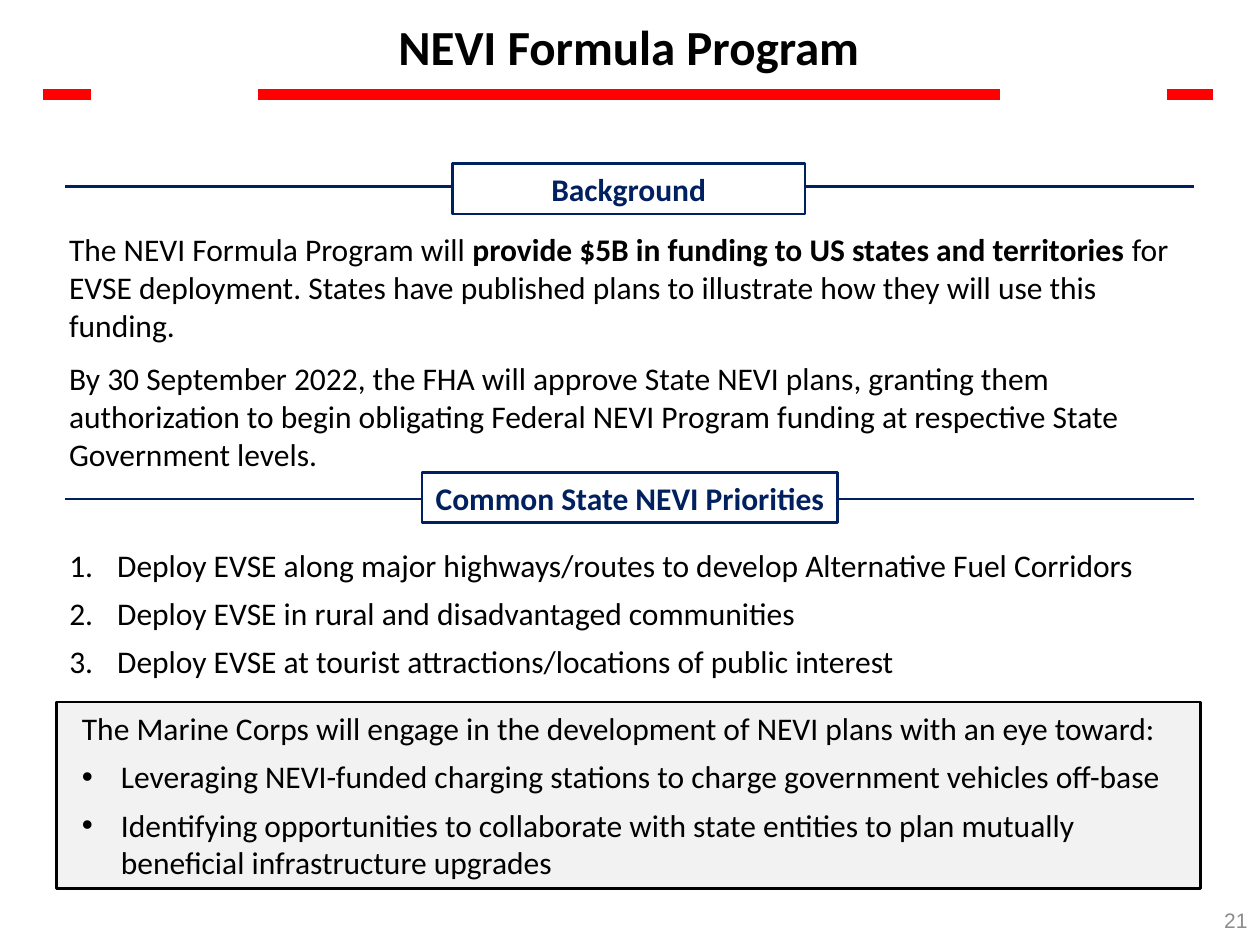
from dataclasses import dataclass

from lxml.etree import SubElement
from pptx import Presentation
from pptx.dml.color import RGBColor
from pptx.enum.shapes import MSO_CONNECTOR, MSO_SHAPE
from pptx.enum.text import MSO_ANCHOR, MSO_AUTO_SIZE, PP_ALIGN
from pptx.oxml.ns import qn
from pptx.util import Inches, Pt


@dataclass(frozen=True)
class Theme:
    font: str = "Calibri"
    number_font: str = "Arial"
    title_size: int = 28
    body_size: int = 18
    number_size: int = 12
    rule_width: float = 6
    outline_width: float = 1.5
    paragraph_gap: int = 6
    black: RGBColor = RGBColor(0, 0, 0)
    white: RGBColor = RGBColor(255, 255, 255)
    red: RGBColor = RGBColor(255, 0, 0)
    navy: RGBColor = RGBColor(0, 0x20, 0x60)
    panel: RGBColor = RGBColor(0xF2, 0xF2, 0xF2)
    grey: RGBColor = RGBColor(0x8C, 0x8C, 0x8C)


THEME = Theme()


def place(shape, left, top, width, height):
    shape.left, shape.top = Inches(left), Inches(top)
    shape.width, shape.height = Inches(width), Inches(height)


def set_frame(text_frame, anchor=MSO_ANCHOR.TOP):
    text_frame.word_wrap = True
    text_frame.auto_size = MSO_AUTO_SIZE.NONE
    text_frame.vertical_anchor = anchor


def style_runs(paragraph, size=THEME.body_size, color=THEME.black, bold=False, font=THEME.font):
    for run in paragraph.runs:
        run.font.name, run.font.size, run.font.bold = font, Pt(size), bold
        run.font.color.rgb = color


def set_bullet(paragraph, indent, tag, **attributes):
    properties = paragraph._p.get_or_add_pPr()
    properties.set("marL", str(Inches(indent)))
    properties.set("indent", str(-Inches(indent)))
    font = SubElement(properties, qn("a:buFont"))
    font.set("typeface", THEME.number_font if tag == "a:buChar" else "+mj-lt")
    bullet = SubElement(properties, qn(tag))
    for name, value in attributes.items():
        bullet.set(name, value)


def add_line(slide, start, end, y, color, width):
    line = slide.shapes.add_connector(
        MSO_CONNECTOR.STRAIGHT, Inches(start), Inches(y), Inches(end), Inches(y))
    line.line.color.rgb = color
    line.line.width = Pt(width)
    SubElement(line._element.spPr, qn("a:effectLst"))


def add_rectangle(slide, left, top, width, height, fill, outline):
    shape = slide.shapes.add_shape(
        MSO_SHAPE.RECTANGLE, Inches(left), Inches(top), Inches(width), Inches(height))
    shape.shadow.inherit = False
    shape.fill.solid()
    shape.fill.fore_color.rgb = fill
    shape.line.color.rgb = outline
    shape.line.width = Pt(THEME.outline_width)
    return shape


# Title with the broken red rule beneath it
def add_header(slide, left, top, width, height, title):
    shape = slide.shapes.title
    place(shape, left, top, width, height)
    set_frame(shape.text_frame, MSO_ANCHOR.MIDDLE)
    shape.text_frame.text = title
    paragraph = shape.text_frame.paragraphs[0]
    paragraph.alignment = PP_ALIGN.CENTER
    style_runs(paragraph, THEME.title_size, bold=True)
    for start, end in ((0.34, 0.72), (2.05, 7.94), (9.26, 9.63)):
        add_line(slide, start, end, top + 0.72, THEME.red, THEME.rule_width)


# Framed section label centred on a horizontal line
def add_section_heading(slide, left, top, width, height, label, line_y):
    add_line(slide, 0.52, 9.48, line_y, THEME.navy, THEME.outline_width)
    shape = add_rectangle(slide, left, top, width, height, THEME.white, THEME.navy)
    set_frame(shape.text_frame, MSO_ANCHOR.MIDDLE)
    shape.text_frame.text = label
    paragraph = shape.text_frame.paragraphs[0]
    paragraph.alignment = PP_ALIGN.CENTER
    style_runs(paragraph, color=THEME.navy, bold=True)


# Plain paragraph; each part is (text, bold)
def add_statement(slide, left, top, width, height, parts):
    box = slide.shapes.add_textbox(Inches(left), Inches(top), Inches(width), Inches(height))
    set_frame(box.text_frame)
    paragraph = box.text_frame.paragraphs[0]
    for text, _ in parts:
        paragraph.add_run().text = text
    style_runs(paragraph)
    for run, (_, bold) in zip(paragraph.runs, parts):
        run.font.bold = bold


# Numbered list in the body placeholder
def add_priorities(slide, left, top, width, height, items):
    body = slide.placeholders[1]
    place(body, left, top, width, height)
    set_frame(body.text_frame)
    body.text_frame.text = "\n".join(items)
    for paragraph in body.text_frame.paragraphs:
        set_bullet(paragraph, 0.38, "a:buAutoNum", type="arabicPeriod")
        paragraph.space_before, paragraph.space_after = Pt(0), Pt(THEME.paragraph_gap)
        style_runs(paragraph)


# Shaded panel with a lead sentence and bullets
def add_engagement_panel(slide, left, top, width, height, lead, items):
    panel = add_rectangle(slide, left, top, width, height, THEME.panel, THEME.black)
    set_frame(panel.text_frame, MSO_ANCHOR.MIDDLE)
    panel.text_frame.margin_left = Inches(0.2)
    panel.text_frame.text = "\n".join([lead, *items])
    for index, paragraph in enumerate(panel.text_frame.paragraphs):
        if index:
            set_bullet(paragraph, 0.31, "a:buChar", char="•")
        paragraph.alignment = PP_ALIGN.LEFT
        paragraph.space_after = Pt(THEME.paragraph_gap)
        style_runs(paragraph)


def add_page_number(slide, left, top, width, height, number):
    box = slide.shapes.add_textbox(Inches(left), Inches(top), Inches(width), Inches(height))
    set_frame(box.text_frame, MSO_ANCHOR.MIDDLE)
    box.text_frame.text = number
    paragraph = box.text_frame.paragraphs[0]
    paragraph.alignment = PP_ALIGN.RIGHT
    style_runs(paragraph, THEME.number_size, THEME.grey, font=THEME.number_font)


def main():
    presentation = Presentation()
    presentation.slide_width, presentation.slide_height = Inches(10), Inches(7.5)
    slide = presentation.slides.add_slide(presentation.slide_layouts[1])

    add_header(slide, 1.53, 0.03, 6.92, 0.67, "NEVI Formula Program")
    add_statement(slide, 0.45, 1.78, 9.08, 1.01, [
        ("The NEVI Formula Program will ", False),
        ("provide $5B in funding to US states and territories ", True),
        ("for EVSE deployment. States have published plans to illustrate "
         "how they will use this funding.", False)])
    add_statement(slide, 0.45, 2.8, 9.08, 1.01, [
        ("By 30 September 2022, the FHA will approve State NEVI plans, granting them "
         "authorization to begin obligating Federal NEVI Program funding at respective "
         "State Government levels.", False)])
    add_priorities(slide, 0.45, 4.28, 9.12, 1.18, [
        "Deploy EVSE along major highways/routes to develop Alternative Fuel Corridors",
        "Deploy EVSE in rural and disadvantaged communities",
        "Deploy EVSE at tourist attractions/locations of public interest"])
    add_engagement_panel(
        slide, 0.45, 5.57, 9.08, 1.48,
        "The Marine Corps will engage in the development of NEVI plans with an eye toward:",
        ["Leveraging NEVI-funded charging stations to charge government vehicles off-base",
         "Identifying opportunities to collaborate with state entities to plan mutually "
         "beneficial infrastructure upgrades"])
    add_section_heading(slide, 3.59, 1.3, 2.8, 0.4, "Background", 1.48)
    add_section_heading(slide, 3.35, 3.75, 3.3, 0.4, "Common State NEVI Priorities", 3.96)
    add_page_number(slide, 7.75, 7.1, 2.25, 0.4, "21")

    presentation.save("out.pptx")


if __name__ == "__main__":
    main()
